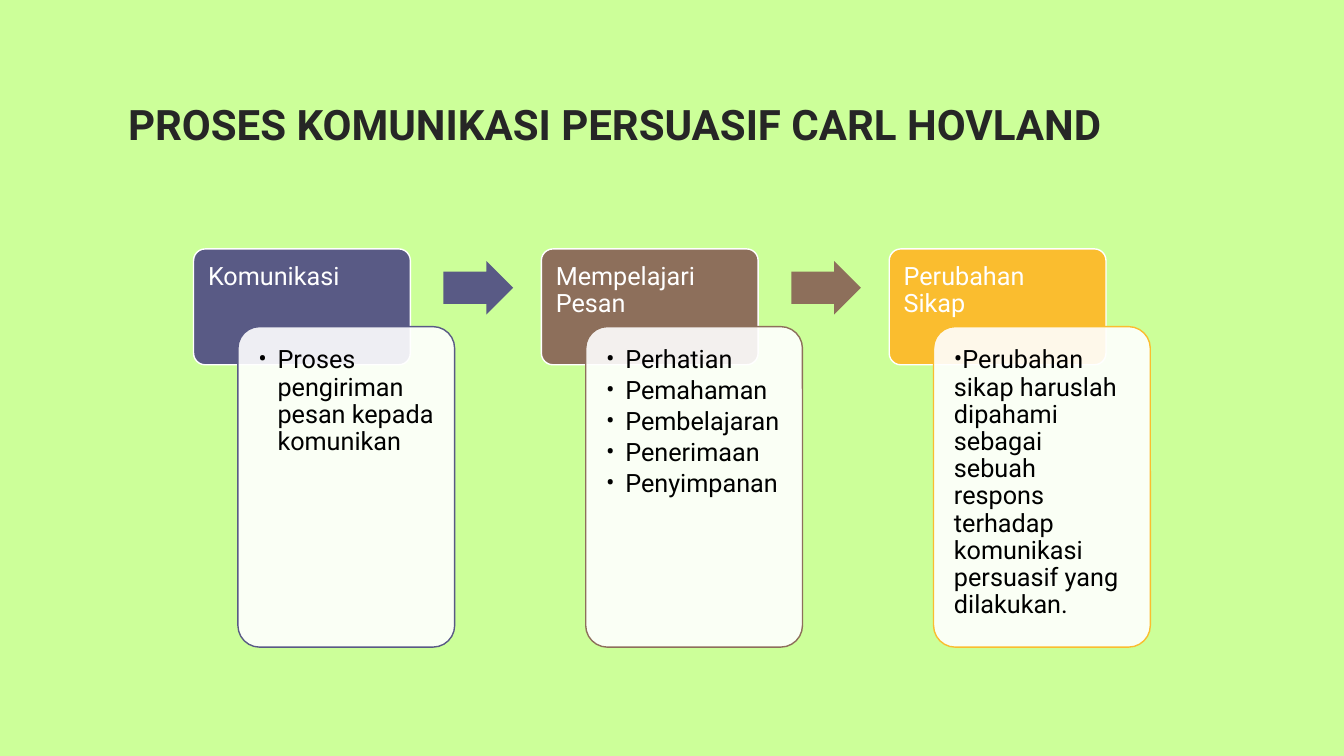
from lxml.etree import SubElement
from pptx import Presentation
from pptx.dml.color import RGBColor
from pptx.enum.shapes import MSO_SHAPE
from pptx.enum.text import MSO_ANCHOR, PP_ALIGN
from pptx.oxml.ns import qn
from pptx.util import Inches, Pt

LIME = RGBColor(0xCC, 0xFF, 0x99)
WHITE = RGBColor(0xFF, 0xFF, 0xFF)
BLACK = RGBColor(0, 0, 0)
INK = RGBColor(0x26, 0x26, 0x26)
INDIGO = RGBColor(0x59, 0x5A, 0x85)
BROWN = RGBColor(0x8D, 0x6F, 0x5B)
GOLD = RGBColor(0xFA, 0xBD, 0x2F)

LEFT, PITCH = 14.4, 25.88
STEPS = [
    ("Komunikasi", INDIGO, 0.19, ["Proses pengiriman pesan kepada komunikan"]),
    ("Mempelajari Pesan", BROWN, 0.19,
     ["Perhatian", "Pemahaman", "Pembelajaran", "Penerimaan", "Penyimpanan"]),
    ("Perubahan Sikap", GOLD, 0,
     ["Perubahan sikap haruslah dipahami sebagai sebuah respons "
      "terhadap komunikasi persuasif yang dilakukan."]),
]


def apply(item, form):
    for key, value in form.items():
        setattr(item, key, value)


class Deck:
    body = {"name": "Roboto", "size": Pt(18), "bold": False}
    head = {"name": "Roboto", "size": Pt(30), "bold": True}
    para = {"line_spacing": 0.9, "space_before": Pt(0),
            "space_after": Pt(2.7), "alignment": PP_ALIGN.LEFT}

    def __init__(self):
        self.show = Presentation()
        apply(self.show, {"slide_width": Inches(13.33), "slide_height": Inches(7.5)})
        self.slide = self.show.slides.add_slide(self.show.slide_layouts[5])
        fill = self.slide.background.fill
        fill.solid()
        fill.fore_color.rgb = LIME

    def area(self, left, top, width, height):
        wide, high = self.show.slide_width, self.show.slide_height
        return [int(share * size / 100) for share, size in
                zip((left, top, width, height), (wide, high, wide, high))]

    def letter(self, shape, lines, font, color, frame):
        text = shape.text_frame
        apply(text, {"word_wrap": True, **frame})
        text.text = "\n".join(lines)
        for para in text.paragraphs:
            apply(para, self.para)
            for run in para.runs:
                apply(run.font, font)
                run.font.color.rgb = color

    def title(self, words, box):
        shape = self.slide.shapes.title
        apply(shape, dict(zip(("left", "top", "width", "height"), self.area(*box))))
        self.letter(shape, [words], self.head, INK,
                    {"vertical_anchor": MSO_ANCHOR.MIDDLE})

    def block(self, kind, box, fill, line, adjust):
        shape = self.slide.shapes.add_shape(kind, *self.area(*box))
        shape.shadow.inherit = False
        shape.fill.solid()
        shape.fill.fore_color.rgb = fill
        if line is None:
            shape.line.fill.background()
        else:
            shape.line.color.rgb = line
            shape.line.width = Pt(1)
        for spot, value in enumerate(adjust):
            shape.adjustments[spot] = value
        return shape

    def label(self, words, box, color):
        shape = self.block(MSO_SHAPE.ROUNDED_RECTANGLE, box, color, WHITE, [0.1])
        pad = Inches(0.11)
        self.letter(shape, [words], self.body, WHITE,
                    {"vertical_anchor": MSO_ANCHOR.TOP, "margin_left": pad,
                     "margin_right": pad, "margin_top": pad})

    def card(self, lines, box, color, indent):
        shape = self.block(MSO_SHAPE.ROUNDED_RECTANGLE, box, WHITE, color, [0.1])
        tint = shape._element.spPr.find(qn("a:solidFill"))[0]
        SubElement(tint, qn("a:alpha"), val="90000")
        sides = ("left", "right", "top", "bottom")
        self.letter(shape, lines, self.body, BLACK,
                    {"vertical_anchor": MSO_ANCHOR.TOP,
                     **{f"margin_{side}": Inches(0.14) for side in sides}})
        for para in shape.text_frame.paragraphs:
            props = para._p.get_or_add_pPr()
            props.set("marL", str(Inches(indent)))
            props.set("indent", str(-Inches(indent)))
            SubElement(props, qn("a:buFont"), typeface="Roboto")
            SubElement(props, qn("a:buChar"), char="•")

    def arrow(self, box, color):
        self.block(MSO_SHAPE.RIGHT_ARROW, box, color, None, [0.6, 0.5])

    def save(self):
        self.show.save("out.pptx")


def main():
    deck = Deck()
    deck.title("PROSES KOMUNIKASI PERSUASIF CARL HOVLAND", (8.78, 11.07, 82.5, 11.33))
    for step, (name, color, indent, lines) in enumerate(STEPS):
        left = LEFT + step * PITCH
        deck.label(name, (left, 32.93, 16.13, 15.33), color)
        deck.card(lines, (left + 3.3, 43.2, 16.13, 42.4), color, indent)
        if step < len(STEPS) - 1:
            deck.arrow((left + 18.6, 34.53, 5.18, 7.07), color)
    deck.save()


if __name__ == "__main__":
    main()
